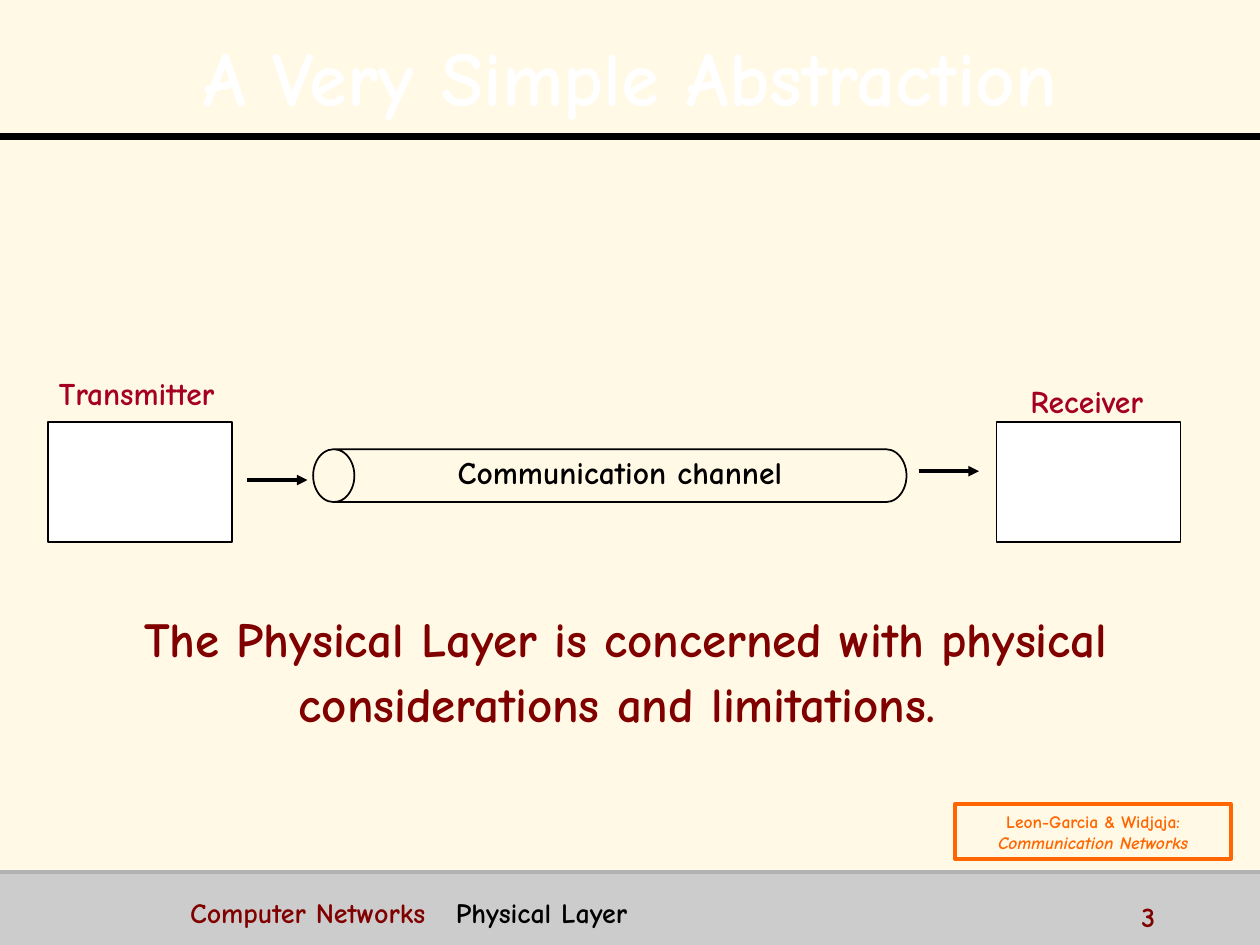
from dataclasses import dataclass

from lxml import etree
from pptx import Presentation
from pptx.dml.color import RGBColor
from pptx.enum.shapes import MSO_CONNECTOR, MSO_SHAPE
from pptx.enum.text import MSO_ANCHOR, PP_ALIGN
from pptx.oxml.ns import qn
from pptx.util import Inches, Pt

RECT, CAN = MSO_SHAPE.RECTANGLE, MSO_SHAPE.CAN
STRAIGHT = MSO_CONNECTOR.STRAIGHT
LEFT, CENTER = PP_ALIGN.LEFT, PP_ALIGN.CENTER
TOP, MIDDLE = MSO_ANCHOR.TOP, MSO_ANCHOR.MIDDLE


@dataclass(frozen=True)
class Theme:
    font: str = "Comic Neue"
    background: str = "FFF9E6"
    footer: str = "CCCCCC"
    footer_rule: str = "B2B2B2"
    black: str = "000000"
    white: str = "FFFFFF"
    label: str = "A50021"
    maroon: str = "800000"
    orange: str = "FF6600"
    title_size: int = 44
    statement_size: int = 28
    label_size: int = 18
    footer_size: int = 16
    citation_size: int = 10


T = Theme()


@dataclass(frozen=True)
class Box:
    x: float
    y: float
    w: float
    h: float

    def emu(self):
        return [Inches(v) for v in (self.x, self.y, self.w, self.h)]


@dataclass(frozen=True)
class Text:
    box: Box
    text: str
    size: int
    color: str
    align: PP_ALIGN = CENTER
    anchor: MSO_ANCHOR = TOP
    spacing: float = 1.0
    wrap: bool = True
    shadow: bool = False


@dataclass(frozen=True)
class Line:
    x1: float
    x2: float
    y: float
    color: str
    width: float
    arrow: bool = False


RULES = [
    Line(0, 10, 1.08, T.black, 4),
    Line(0, 10, 6.92, T.footer_rule, 2),
]
ARROWS = [
    Line(1.96, 2.44, 3.81, T.black, 2, True),
    Line(7.29, 7.77, 3.74, T.black, 2, True),
]
STATIONS = [Box(0.38, 3.35, 1.46, 0.95), Box(7.91, 3.35, 1.46, 0.95)]
TEXTS = [
    Text(Box(0.2, 0.13, 9.61, 0.87), "A Very Simple Abstraction", T.title_size,
         T.white, anchor=MIDDLE, spacing=1.1, shadow=True),
    Text(Box(0.33, 2.92, 1.51, 0.4), "Transmitter", T.label_size, T.label, wrap=False),
    Text(Box(8.06, 2.98, 1.13, 0.4), "Receiver", T.label_size, T.label, wrap=False),
    Text(Box(3.28, 3.55, 3.28, 0.4), "Communication channel", T.label_size, T.black),
    Text(Box(0.16, 4.64, 9.61, 1.31),
         "The Physical Layer is concerned with physical considerations and limitations. ",
         T.statement_size, T.maroon, anchor=MIDDLE, spacing=1.1, shadow=True),
    Text(Box(8.96, 7.09, 1, 0.25), "3", T.footer_size, T.maroon, LEFT),
]


def rgb(value: str) -> RGBColor:
    return RGBColor.from_string(value)


def style(p, size: int, color: str, align: PP_ALIGN) -> None:
    p.alignment = align
    f = p.font
    f.name, f.size, f.bold = T.font, Pt(size), True
    f.color.rgb = rgb(color)


def add_text_shadow(r) -> None:
    effects = etree.SubElement(r._r.get_or_add_rPr(), qn("a:effectLst"))
    shadow = etree.SubElement(effects, qn("a:outerShdw"),
                              dist="38100", dir="2700000", algn="tl")
    etree.SubElement(shadow, qn("a:srgbClr"), val=T.black)


def add_text(s, t: Text):
    tf = s.shapes.add_textbox(*t.box.emu()).text_frame
    tf.word_wrap = t.wrap
    tf.vertical_anchor = t.anchor
    p = tf.paragraphs[0]
    r = p.add_run()
    r.text = t.text
    p.line_spacing = t.spacing
    style(p, t.size, t.color, t.align)
    if t.shadow:
        add_text_shadow(r)


def add_shape(s, kind: MSO_SHAPE, box: Box, fill: str = "", line: str = "",
              width: float = 1):
    sp = s.shapes.add_shape(kind, *box.emu())
    sp.shadow.inherit = False
    if fill:
        sp.fill.solid()
        sp.fill.fore_color.rgb = rgb(fill)
    else:
        sp.fill.background()
    if line:
        sp.line.color.rgb = rgb(line)
        sp.line.width = Pt(width)
    else:
        sp.line.fill.background()
    return sp


def add_line(s, line: Line) -> None:
    y = Inches(line.y)
    c = s.shapes.add_connector(STRAIGHT, Inches(line.x1), y, Inches(line.x2), y)
    c.line.color.rgb = rgb(line.color)
    c.line.width = Pt(line.width)
    if line.arrow:
        etree.SubElement(c.line._get_or_add_ln(), qn("a:tailEnd"), type="triangle")
    etree.SubElement(c._element.spPr, qn("a:effectLst"))


def add_channel(s) -> None:
    sp = add_shape(s, CAN, Box(4.63, 1.42, 0.42, 4.71), line=T.black)
    sp.rotation = 270
    sp.adjustments[0] = 0.78


def add_citation(s) -> None:
    sp = add_shape(s, RECT, Box(7.58, 6.38, 2.19, 0.44), line=T.orange, width=2)
    tf = sp.text_frame
    tf.word_wrap = True
    tf.vertical_anchor = MIDDLE
    tf.text = "Leon-Garcia & Widjaja:\nCommunication Networks"
    for p in tf.paragraphs:
        style(p, T.citation_size, T.orange, CENTER)
    tf.paragraphs[1].font.italic = True


def add_footer(s) -> None:
    tf = s.shapes.add_textbox(*Box(1.41, 7.06, 7.28, 0.31).emu()).text_frame
    tf.word_wrap = True
    p = tf.paragraphs[0]
    tabs = etree.SubElement(p._p.get_or_add_pPr(), qn("a:tabLst"))
    etree.SubElement(tabs, qn("a:tab"), pos=str(Inches(2.11)), algn="l")
    style(p, T.footer_size, T.maroon, LEFT)
    p.add_run().text = "Computer Networks\t"
    r = p.add_run()
    r.text = "Physical Layer"
    r.font.color.rgb = rgb(T.black)


def main() -> None:
    prs = Presentation()
    prs.slide_width, prs.slide_height = Inches(10), Inches(7.5)
    s = prs.slides.add_slide(prs.slide_layouts[6])
    s.background.fill.solid()
    s.background.fill.fore_color.rgb = rgb(T.background)
    add_shape(s, RECT, Box(0, 6.92, 10, 0.58), fill=T.footer)
    for station in STATIONS:
        add_shape(s, RECT, station, T.white, T.black)
    add_channel(s)
    for line in RULES + ARROWS:
        add_line(s, line)
    for text in TEXTS:
        add_text(s, text)
    add_citation(s)
    add_footer(s)
    prs.save("out.pptx")


if __name__ == "__main__":
    main()
